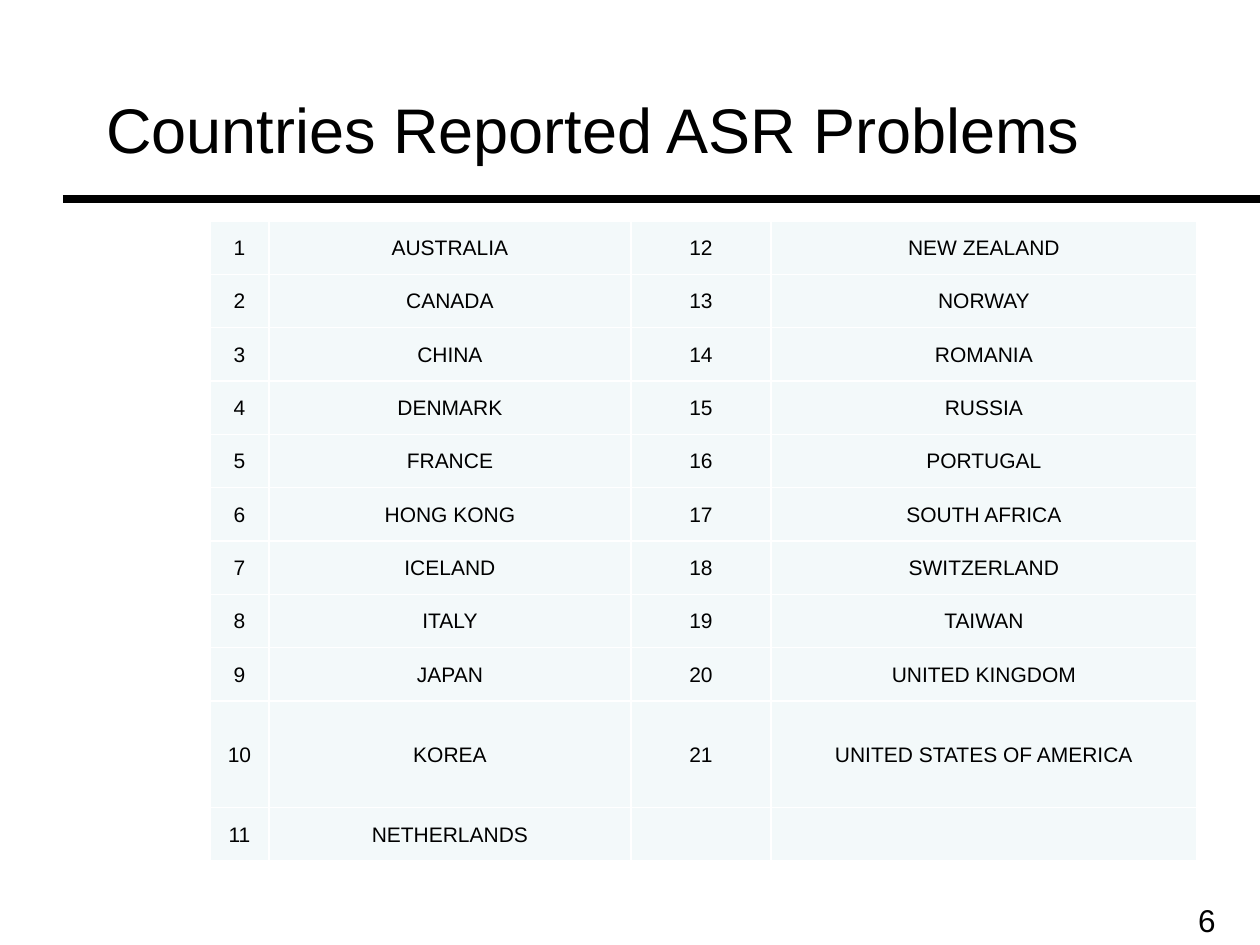
import pptx
import pptx.util
import pptx.dml.color
import pptx.enum.shapes
import pptx.enum.text
import pptx.oxml
import pptx.oxml.ns
import lxml.etree

SCALE = 914400 // 126  # EMU per px
COLORS = {"ink": "000000", "cell": "F3F9FA", "border": "FFFFFF"}
ALIGN = pptx.enum.text.PP_ALIGN

LEFT_COUNTRIES = ["AUSTRALIA", "CANADA", "CHINA", "DENMARK", "FRANCE", "HONG KONG",
                  "ICELAND", "ITALY", "JAPAN", "KOREA", "NETHERLANDS"]
RIGHT_COUNTRIES = ["NEW ZEALAND", "NORWAY", "ROMANIA", "RUSSIA", "PORTUGAL",
                   "SOUTH AFRICA", "SWITZERLAND", "TAIWAN", "UNITED KINGDOM",
                   "UNITED STATES OF AMERICA"]
COLUMN_WIDTHS = [59, 362, 140, 426]
TABLE_HEIGHT = 640
TALL_ROW = 9


def px(length):
    return pptx.util.Emu(length * SCALE)


def write(frame, text, size, align=ALIGN.LEFT):
    frame.word_wrap = True
    para = frame.paragraphs[0]
    para.alignment = align
    span = para.add_run()
    span.text = text
    span.font.size = pptx.util.Pt(size)
    span.font.name = "Arial"
    span.font.color.rgb = pptx.dml.color.RGBColor.from_string(COLORS["ink"])


deck = pptx.Presentation()
deck.slide_width, deck.slide_height = px(1260), px(945)
page = deck.slides.add_slide(deck.slide_layouts[6])

# Rule under the title
rule = page.shapes.add_connector(
    pptx.enum.shapes.MSO_CONNECTOR.STRAIGHT, px(63), px(199), px(1260), px(199))
rule.line.width = pptx.util.Pt(4.5)
rule.line.color.rgb = pptx.dml.color.RGBColor.from_string(COLORS["ink"])
lxml.etree.SubElement(rule.line._get_or_add_ln().getparent(),
                      pptx.oxml.ns.qn("a:effectLst"))

# Title
title = page.shapes.add_textbox(px(94), px(84), px(1103), px(89))
write(title.text_frame, "Countries Reported ASR Problems", 36)

# Numbered countries, in two pairs of columns
count = len(LEFT_COUNTRIES)
table = page.shapes.add_table(count, len(COLUMN_WIDTHS), px(210), px(221),
                              px(sum(COLUMN_WIDTHS)), px(TABLE_HEIGHT)).table
table.first_row = False
table.horz_banding = False
for column, width in zip(table.columns, COLUMN_WIDTHS):
    column.width = px(width)

row_height = px(TABLE_HEIGHT) // (count + 1)  # the tall row counts twice
for index, row in enumerate(table.rows):
    row.height = row_height * (2 if index == TALL_ROW else 1)
    texts = [str(index + 1), LEFT_COUNTRIES[index]]
    if index < len(RIGHT_COUNTRIES):
        texts += [str(index + 1 + count), RIGHT_COUNTRIES[index]]
    else:
        texts += ["", ""]
    for cell, text in zip(row.cells, texts):
        cell.margin_left = cell.margin_right = cell.margin_top = px(1)
        cell.margin_bottom = 0
        cell.vertical_anchor = pptx.enum.text.MSO_ANCHOR.MIDDLE
        if text:
            write(cell.text_frame, text, 12, ALIGN.CENTER)
        properties = cell._tc.get_or_add_tcPr()
        for side in ("lnL", "lnR", "lnT", "lnB"):
            properties.append(pptx.oxml.parse_xml(
                f'<a:{side} {pptx.oxml.ns.nsdecls("a")} w="12700"><a:solidFill>'
                f'<a:srgbClr val="{COLORS["border"]}"/></a:solidFill></a:{side}>'))
        cell.fill.solid()
        cell.fill.fore_color.rgb = pptx.dml.color.RGBColor.from_string(COLORS["cell"])

# Page number
number = page.shapes.add_textbox(px(976), px(895), px(252), px(50))
write(number.text_frame, "6", 18, ALIGN.RIGHT)

deck.save("out.pptx")
